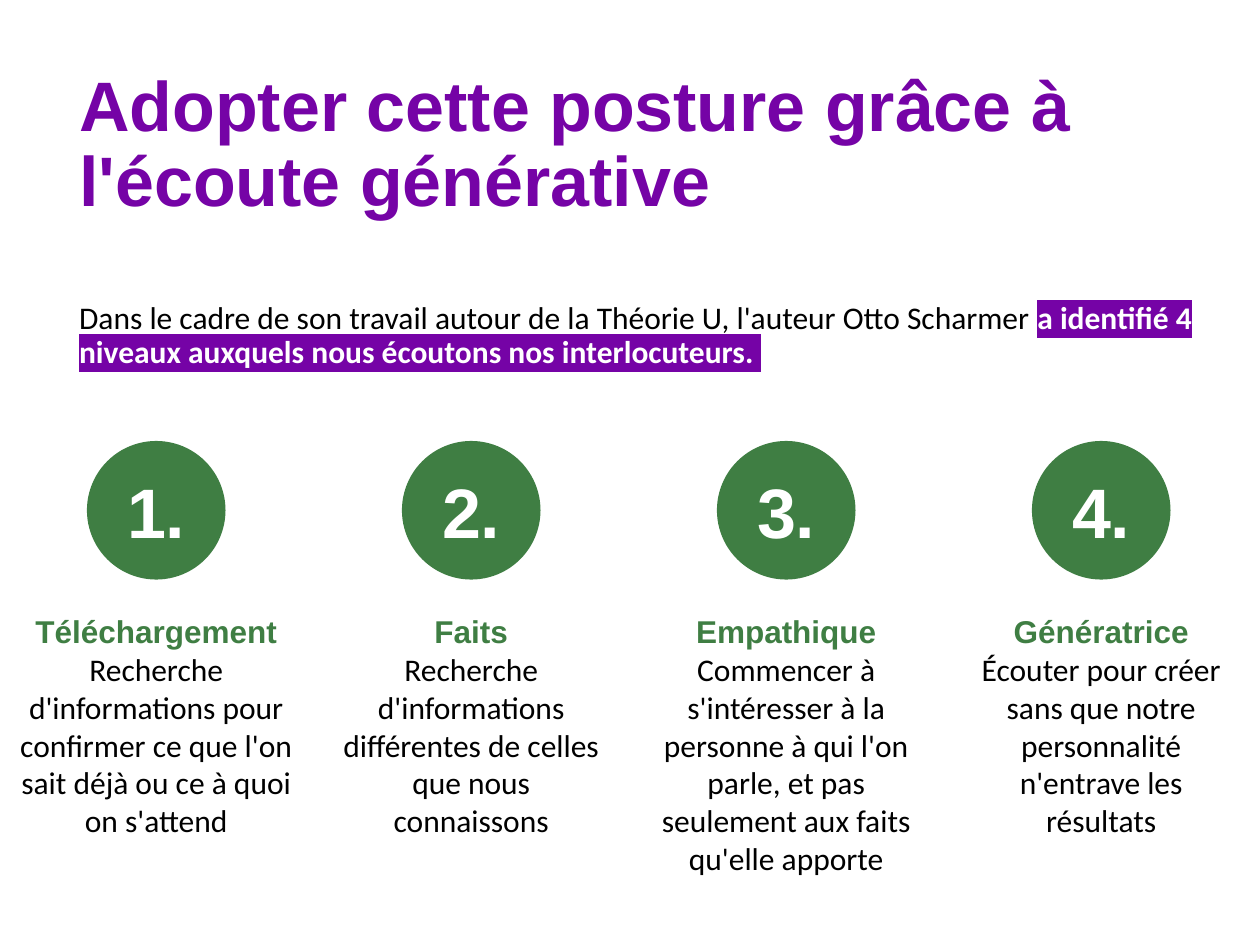
import pptx
import pptx.util
import pptx.dml.color
import pptx.enum.shapes
import pptx.enum.text
import lxml.etree
from pptx.util import Inches

# Content
TITLE = "Adopter cette posture grâce à l'écoute générative"
INTRO = "Dans le cadre de son travail autour de la Théorie U, l'auteur Otto Scharmer "
INTRO_KEY = "a identifié 4 niveaux auxquels nous écoutons nos interlocuteurs. "
LEVELS = [
    ("Téléchargement", "Recherche d'informations pour confirmer ce que l'on "
     "sait déjà ou ce à quoi on s'attend", 1.92),
    ("Faits", "Recherche d'informations différentes de celles que nous "
     "connaissons", 1.62),
    ("Empathique", "Commencer à s'intéresser à la personne à qui l'on parle, "
     "et pas seulement aux faits qu'elle apporte", 1.92),
    ("Génératrice", "Écouter pour créer sans que notre personnalité n'entrave "
     "les résultats", 1.62),
]

# Style
PURPLE = pptx.dml.color.RGBColor(0x75, 0x03, 0xA6)
GREEN = pptx.dml.color.RGBColor(0x3F, 0x7E, 0x43)
BLACK = pptx.dml.color.RGBColor(0, 0, 0)
WHITE = pptx.dml.color.RGBColor(0xFF, 0xFF, 0xFF)
ALIGN = pptx.enum.text.PP_ALIGN
ANCHOR = pptx.enum.text.MSO_ANCHOR
AUTO_SIZE = pptx.enum.text.MSO_AUTO_SIZE

# Column grid, in inches
FIRST_CENTER, PITCH = 1.24, 2.5
CIRCLE_TOP, CIRCLE_SIZE = 3.5, 1.1
LABEL_TOP, LABEL_WIDTH = 4.81, 2.37


def add_text(para, text, font="Calibri", size=18, color=BLACK, bold=False,
             highlight=None):
    span = para.add_run()
    span.text = text
    span.font.name = font
    span.font.size = pptx.util.Pt(size)
    span.font.bold = bold
    span.font.color.rgb = color
    if highlight is not None:
        namespace = pptx.oxml.ns.nsuri("a")
        mark = lxml.etree.Element(f"{{{namespace}}}highlight")
        lxml.etree.SubElement(mark, f"{{{namespace}}}srgbClr", val=str(highlight))
        fill = span.font._element.find(f"{{{namespace}}}solidFill")
        fill.addnext(mark)


def set_frame(frame, anchor=ANCHOR.TOP, auto_size=AUTO_SIZE.NONE):
    frame.word_wrap = True
    frame.auto_size = auto_size
    frame.vertical_anchor = anchor
    return frame.paragraphs[0]


deck = pptx.Presentation()
deck.slide_width, deck.slide_height = Inches(10), Inches(7.5)
page = deck.slides.add_slide(deck.slide_layouts[5])

# Title
title = page.shapes.title
title.left, title.top = Inches(0.53), Inches(0.51)
title.width, title.height = Inches(8.23), Inches(1.45)
para = set_frame(title.text_frame)
para.alignment = ALIGN.LEFT
para.line_spacing = 0.9
add_text(para, TITLE, font="Arial", size=40, color=PURPLE, bold=True)

# Introduction
intro = page.shapes.add_textbox(Inches(0.53), Inches(2.35), Inches(9.13), Inches(0.67))
para = set_frame(intro.text_frame)
para.line_spacing = 0.9
add_text(para, INTRO)
add_text(para, INTRO_KEY, color=WHITE, bold=True, highlight=PURPLE)

# Four listening levels
for index, (name, description, height) in enumerate(LEVELS):
    center = FIRST_CENTER + index * PITCH

    circle = page.shapes.add_shape(
        pptx.enum.shapes.MSO_SHAPE.OVAL, Inches(center - CIRCLE_SIZE / 2),
        Inches(CIRCLE_TOP), Inches(CIRCLE_SIZE), Inches(CIRCLE_SIZE))
    circle.shadow.inherit = False
    circle.fill.solid()
    circle.fill.fore_color.rgb = GREEN
    circle.line.fill.background()
    para = set_frame(circle.text_frame, anchor=ANCHOR.MIDDLE)
    para.alignment = ALIGN.CENTER
    add_text(para, f"{index + 1}.", font="Arial", size=40, color=WHITE, bold=True)

    label = page.shapes.add_textbox(
        Inches(center - LABEL_WIDTH / 2), Inches(LABEL_TOP),
        Inches(LABEL_WIDTH), Inches(height))
    para = set_frame(label.text_frame, auto_size=AUTO_SIZE.SHAPE_TO_FIT_TEXT)
    para.alignment = ALIGN.CENTER
    add_text(para, name, font="Arial", color=GREEN, bold=True)
    para = label.text_frame.add_paragraph()
    para.alignment = ALIGN.CENTER
    add_text(para, description)

deck.save("out.pptx")
